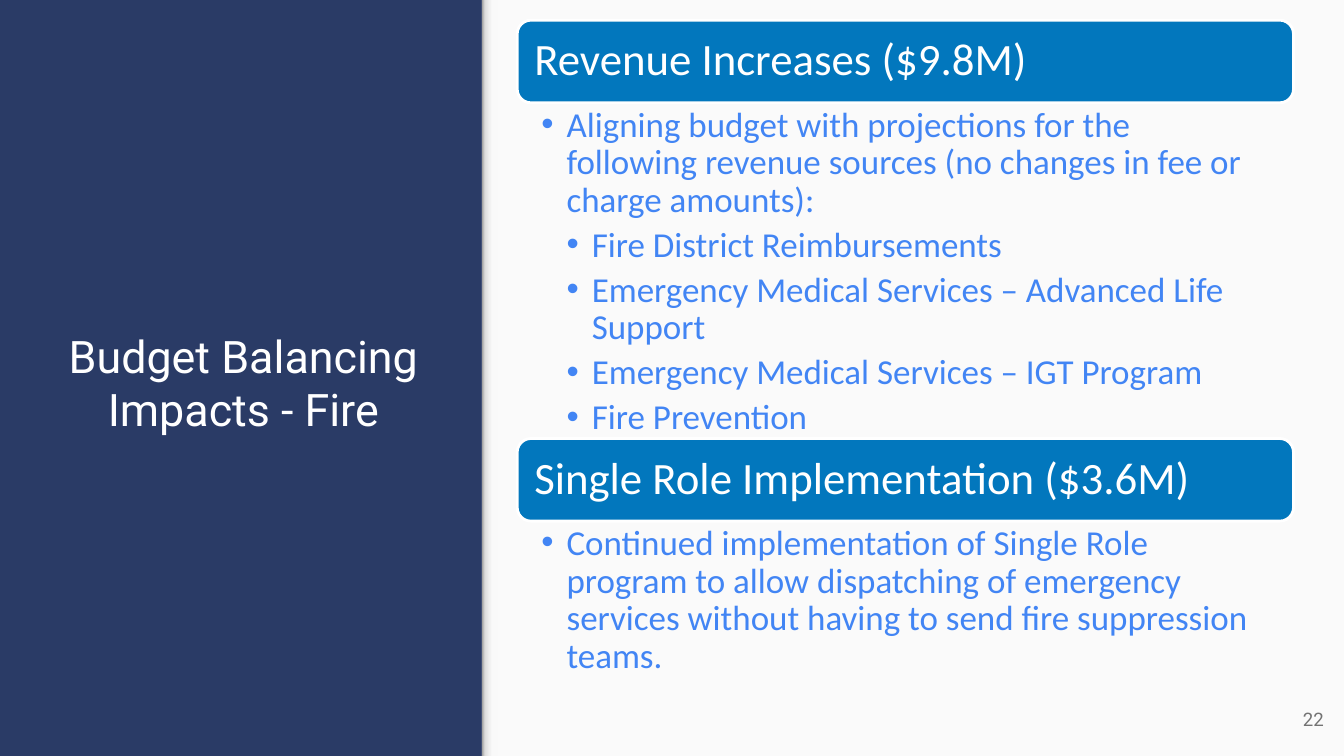
"""Build the fire budget balancing slide."""
from copy import deepcopy
from dataclasses import dataclass

from lxml import etree
from pptx import Presentation
from pptx.dml.color import RGBColor
from pptx.enum import shapes, text
from pptx.oxml import ns
from pptx.util import Inches, Pt


@dataclass(frozen=True)
class Theme:
    navy: str = "2A3B66"
    panel: str = "FAFAFA"
    banner: str = "0277BD"
    body: str = "4285F4"
    white: str = "FFFFFF"
    grey: str = "737373"
    shadow: tuple = ((0, "999999"), (0.2, "DEDEDE"), (0.64, "F9F9F9"), (1, "F9F9F9"))
    heading_font: str = "Roboto"
    body_font: str = "Calibri"
    heading_size: float = 32
    body_size: float = 25
    number_size: float = 13.3


THEME = Theme()
LEFT, WIDTH, BANNER_HEIGHT = 5.13, 7.7, 0.82
PANEL_LEFT = 4.78
SECTIONS = (
    (0.2, 3.33, "Revenue Increases ($9.8M)", (
        (1, "Aligning budget with projections for the following revenue sources "
            "(no changes in fee or charge amounts):"),
        (2, "Fire District Reimbursements"),
        (2, "Emergency Medical Services – Advanced Life Support"),
        (2, "Emergency Medical Services – IGT Program"),
        (2, "Fire Prevention"),
    )),
    (4.35, 1.56, "Single Role Implementation ($3.6M)", (
        (1, "Continued implementation of Single Role program to allow dispatching of "
            "emergency services without having to send fire suppression teams."),
    )),
)


def color(value):
    return RGBColor.from_string(value)


def box(left, top, width, height):
    return tuple(Inches(value) for value in (left, top, width, height))


def format_frame(frame, insets, anchor):
    frame.word_wrap = True
    frame.auto_size = text.MSO_AUTO_SIZE.NONE
    frame.vertical_anchor = anchor
    frame.margin_left, frame.margin_top, frame.margin_right, frame.margin_bottom = (
        Inches(inset) for inset in insets)


def format_paragraph(paragraph, font, size, fill, alignment):
    paragraph.alignment = alignment
    for run in paragraph.runs:
        run.font.name = font
        run.font.size = Pt(size)
        run.font.color.rgb = color(fill)


def add_block(slide, kind, position, fill):
    shape = slide.shapes.add_shape(kind, *box(*position))
    shape.shadow.inherit = False
    shape.fill.solid()
    shape.fill.fore_color.rgb = color(fill)
    shape.line.fill.background()
    return shape


def add_panel(slide):
    rectangle = shapes.MSO_SHAPE.RECTANGLE
    add_block(slide, rectangle, (PANEL_LEFT, 0, 8.56, 7.5), THEME.panel)
    edge = add_block(slide, rectangle, (PANEL_LEFT, 0, 0.16, 7.5), THEME.panel)
    edge.fill.gradient()
    edge.fill.gradient_angle = 0
    stop_list = next(edge.element.iter(ns.qn("a:gsLst")))
    for stop in list(stop_list):
        stop_list.append(deepcopy(stop))
    for stop, (position, fill) in zip(edge.fill.gradient_stops, THEME.shadow):
        stop.position = position
        stop.color.rgb = color(fill)


def set_title(slide, wording):
    title = slide.shapes.title
    title.left, title.top, title.width, title.height = box(0.37, 2.84, 4.09, 1.9)
    title.text_frame.text = wording
    format_frame(title.text_frame, (0.1,) * 4, text.MSO_ANCHOR.MIDDLE)
    format_paragraph(title.text_frame.paragraphs[0], THEME.heading_font,
                     THEME.heading_size, THEME.white, text.PP_ALIGN.CENTER)


def add_page_number(slide, number):
    frame = slide.shapes.add_textbox(*box(12.43, 6.85, 0.8, 0.57)).text_frame
    frame.text = number
    format_frame(frame, (0.1,) * 4, text.MSO_ANCHOR.MIDDLE)
    format_paragraph(frame.paragraphs[0], THEME.heading_font,
                     THEME.number_size, THEME.grey, text.PP_ALIGN.RIGHT)


def add_banner(slide, top, wording):
    banner = add_block(slide, shapes.MSO_SHAPE.ROUNDED_RECTANGLE,
                       (LEFT, top, WIDTH, BANNER_HEIGHT), THEME.banner)
    banner.line.color.rgb = color(THEME.white)
    banner.line.width = Pt(2)
    frame = banner.text_frame
    frame.text = wording
    format_frame(frame, (0.13,) * 4, text.MSO_ANCHOR.MIDDLE)
    frame.paragraphs[0].line_spacing = 0.9
    format_paragraph(frame.paragraphs[0], THEME.body_font,
                     THEME.heading_size, THEME.white, text.PP_ALIGN.LEFT)


def add_bullet(paragraph, level):
    properties = paragraph._p.get_or_add_pPr()
    properties.set("marL", str(Inches(0.25 * level)))
    properties.set("indent", str(Inches(-0.25)))
    etree.SubElement(properties, ns.qn("a:buFont"), typeface="Arial")
    etree.SubElement(properties, ns.qn("a:buChar"), char="•")


def add_bullets(slide, top, height, items):
    frame = slide.shapes.add_textbox(*box(LEFT, top, WIDTH, height)).text_frame
    frame.text = "\n".join(wording for _, wording in items)
    format_frame(frame, (0.24, 0.04, 0.25, 0.04), text.MSO_ANCHOR.TOP)
    for paragraph, (level, _) in zip(frame.paragraphs, items):
        add_bullet(paragraph, level)
        paragraph.level = level
        paragraph.line_spacing = 0.9
        paragraph.space_after = Pt(5)
        format_paragraph(paragraph, THEME.body_font, THEME.body_size,
                         THEME.body, text.PP_ALIGN.LEFT)


def main():
    presentation = Presentation()
    presentation.slide_width = Inches(13.33)
    presentation.slide_height = Inches(7.5)
    slide = presentation.slides.add_slide(presentation.slide_layouts[5])
    slide.background.fill.solid()
    slide.background.fill.fore_color.rgb = color(THEME.navy)
    add_panel(slide)
    set_title(slide, "Budget Balancing Impacts - Fire")
    add_page_number(slide, "22")
    for top, height, heading, items in SECTIONS:
        add_banner(slide, top, heading)
        add_bullets(slide, top + BANNER_HEIGHT, height, items)
    presentation.save("out.pptx")


if __name__ == "__main__":
    main()
